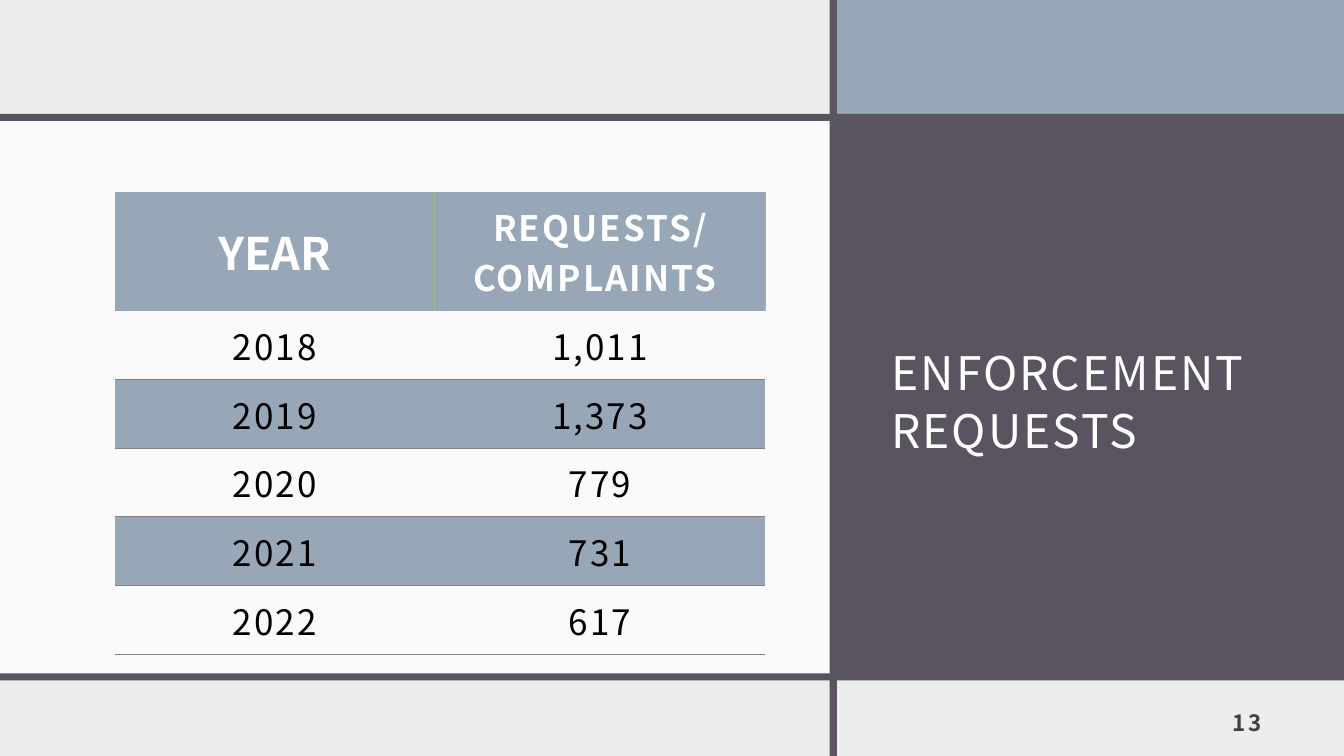
import pptx
import pptx.util
import pptx.dml.color
import pptx.enum.shapes
import pptx.enum.text
import pptx.oxml
import pptx.oxml.ns
from pptx.util import Inches

FONT = "Noto Sans CJK JP"
COLORS = {
    "backdrop": "EBEDEB",
    "paper": "FAFAFA",
    "blue": "97A7B8",
    "plum": "595460",
    "white": "FFFFFF",
    "black": "000000",
    "number": "404040",
    "row_line": "808080",
    "header_line": "A5B592",
}
ALIGN = pptx.enum.text.PP_ALIGN
ANCHOR = pptx.enum.text.MSO_ANCHOR
NO_TABLE_STYLE = "{2D5ABB26-0587-4C30-8999-92F81FD0307C}"

PANELS = [
    (0, 1.13, 8.24, 5.59, "paper"),
    (8.26, 0, 5.07, 1.16, "blue"),
    (8.3, 1.2, 5.03, 5.49, "plum"),
]
BARS = [
    (0, 1.13, 13.33, 0.07, "plum"),
    (0, 6.68, 13.33, 0.07, "plum"),
    (8.23, 0, 0.07, 7.5, "plum"),
]
REQUESTS = [
    ("2018", "1,011"),
    ("2019", "1,373"),
    ("2020", "779"),
    ("2021", "731"),
    ("2022", "617"),
]


def rgb(color):
    return pptx.dml.color.RGBColor.from_string(COLORS[color])


def add_block(page, left, top, width, height, color):
    block = page.shapes.add_shape(
        pptx.enum.shapes.MSO_SHAPE.RECTANGLE,
        Inches(left), Inches(top), Inches(width), Inches(height))
    block.shadow.inherit = False
    block.fill.solid()
    block.fill.fore_color.rgb = rgb(color)
    block.line.fill.background()


def add_span(para, text, size, color, bold=False, spacing=1.5):
    """Add a run; spacing is the letter spacing in points."""
    span = para.add_run()
    span.text = text
    span.font.name = FONT
    span.font.size = pptx.util.Pt(size)
    span.font.bold = bold
    span.font.color.rgb = rgb(color)
    if spacing:
        span.font._element.set("spc", str(int(spacing * 100)))


def prepare_frame(frame):
    """Wrap text, anchor it at the bottom and set the shared insets."""
    frame.word_wrap = True
    frame.auto_size = pptx.enum.text.MSO_AUTO_SIZE.NONE
    frame.vertical_anchor = ANCHOR.BOTTOM
    frame.margin_left = frame.margin_right = frame.margin_top = Inches(0.12)
    frame.margin_bottom = Inches(0.1)
    return frame.paragraphs[0]


def place_title(page, text):
    title = page.shapes.title
    title.left, title.top = Inches(8.72), Inches(1.87)
    title.width, title.height = Inches(4.11), Inches(2.77)
    para = prepare_frame(title.text_frame)
    para.alignment = ALIGN.LEFT
    para.line_spacing = 1.05
    add_span(para, text, 33, "white")
    # Bring the title in front of the panels.
    title.element.getparent().append(title.element)


def add_page_number(page, number):
    box = page.shapes.add_textbox(
        Inches(11.56), Inches(6.9), Inches(1.07), Inches(0.5))
    para = prepare_frame(box.text_frame)
    para.alignment = ALIGN.RIGHT
    add_span(para, number, 16, "number", bold=True)


def add_border(cell, side, color):
    """Draw a 1 pt border; call in the order L, R, T, B before any fill."""
    cell._tc.get_or_add_tcPr().append(pptx.oxml.parse_xml(
        f'<a:ln{side} {pptx.oxml.ns.nsdecls("a")} w="12700"><a:solidFill>'
        f'<a:srgbClr val="{COLORS[color]}"/></a:solidFill></a:ln{side}>'))


def fill_cell(cell, lines, size, color, shaded, bold=False, spacing=1.5):
    cell.vertical_anchor = ANCHOR.MIDDLE
    cell.margin_left = cell.margin_right = Inches(0.18)
    cell.margin_top = cell.margin_bottom = Inches(0.09)
    if shaded:
        cell.fill.solid()
        cell.fill.fore_color.rgb = rgb("blue")
    else:
        cell.fill.background()
    frame = cell.text_frame
    for index, line in enumerate(lines):
        para = frame.add_paragraph() if index else frame.paragraphs[0]
        para.alignment = ALIGN.CENTER
        add_span(para, line, size, color, bold, spacing)


def add_request_table(page):
    frame = page.shapes.add_table(
        len(REQUESTS) + 1, 2,
        Inches(1.14), Inches(1.9), Inches(6.45), Inches(4.58))
    table = frame.table
    table.first_row = table.horz_banding = False
    style = table._tbl.tblPr.find(pptx.oxml.ns.qn("a:tableStyleId"))
    style.text = NO_TABLE_STYLE
    for column, width in zip(table.columns, (3.17, 3.28)):
        column.width = Inches(width)
    for index, row in enumerate(table.rows):
        row.height = Inches(0.68 if index else 1.18)

    year, requests = table.cell(0, 0), table.cell(0, 1)
    add_border(requests, "L", "header_line")
    for cell in (year, requests):
        add_border(cell, "R", "header_line")
    fill_cell(year, ["YEAR"], 32, "white", True, bold=True, spacing=0)
    fill_cell(requests, ["REQUESTS/", "COMPLAINTS "], 25, "white", True,
              bold=True)

    for row, values in enumerate(REQUESTS, start=1):
        for column, value in enumerate(values):
            cell = table.cell(row, column)
            add_border(cell, "B", "row_line")
            fill_cell(cell, [value], 25, "black", shaded=row % 2 == 0)


def main():
    deck = pptx.Presentation()
    deck.slide_width, deck.slide_height = Inches(13.33), Inches(7.5)
    page = deck.slides.add_slide(deck.slide_layouts.get_by_name("Title Only"))
    page.background.fill.solid()
    page.background.fill.fore_color.rgb = rgb("backdrop")
    for block in PANELS + BARS:
        add_block(page, *block)
    place_title(page, "ENFORCEMENT REQUESTS")
    add_page_number(page, "13")
    add_request_table(page)
    deck.save("out.pptx")


if __name__ == "__main__":
    main()
